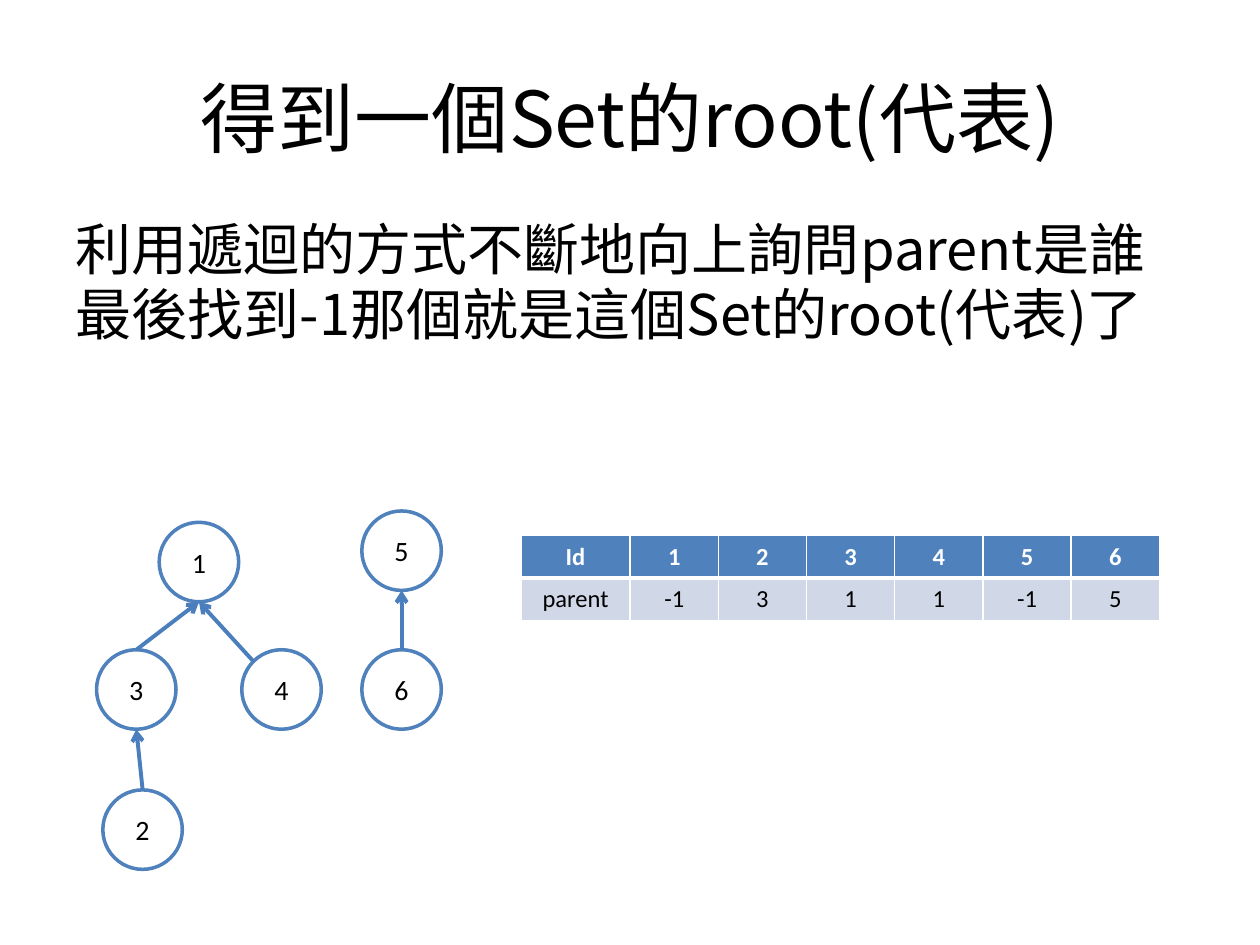
from dataclasses import dataclass

from lxml import etree
from pptx import Presentation
from pptx.dml.color import RGBColor
from pptx.enum import shapes, text
from pptx.oxml import ns
from pptx.util import Pt


@dataclass(frozen=True)
class Theme:
    """Colours, fonts and sizes of the slide."""
    black: RGBColor = RGBColor(0, 0, 0)
    white: RGBColor = RGBColor(255, 255, 255)
    blue: RGBColor = RGBColor(0x4F, 0x81, 0xBD)
    arrow: RGBColor = RGBColor(0x4B, 0x7E, 0xBC)
    pale: RGBColor = RGBColor(0xD0, 0xD8, 0xE8)
    chinese: str = "Noto Sans CJK SC"
    latin: str = "Calibri"
    title: int = 44
    body: int = 32
    node: int = 16
    cell: int = 14


THEME = Theme()
NODE_SIZE = 45.4
DIAGONAL = 0.5 ** 0.5


def add_child(parent, tag, **attributes):
    """Append a DrawingML element to a parent."""
    return etree.SubElement(parent, ns.qn(tag), attributes)


def format_text(frame, font, size, color, align, bold=False):
    """Format every paragraph and run of a text frame."""
    for paragraph in frame.paragraphs:
        paragraph.alignment = align
        for run in paragraph.runs:
            run.font.name = font
            run.font.size = Pt(size)
            run.font.bold = bold
            run.font.color.rgb = color
            add_child(run.font._element, "a:ea", typeface=font)


def place_title(slide, left, top, width, height):
    """Place the title in its box."""
    title = slide.shapes.title
    title.left, title.top, title.width, title.height = map(Pt, (left, top, width, height))
    frame = title.text_frame
    frame.text = "得到一個Set的root(代表)"
    frame.vertical_anchor = text.MSO_ANCHOR.MIDDLE
    format_text(frame, THEME.chinese, THEME.title, THEME.black, text.PP_ALIGN.CENTER)


def add_body(slide, left, top, width, height):
    """Add the explanation in its box."""
    frame = slide.shapes.add_textbox(*map(Pt, (left, top, width, height))).text_frame
    frame.word_wrap = True
    frame.text = "利用遞迴的方式不斷地向上詢問parent是誰\n最後找到-1那個就是這個Set的root(代表)了"
    format_text(frame, THEME.chinese, THEME.body, THEME.black, text.PP_ALIGN.LEFT)
    for paragraph in frame.paragraphs:
        paragraph.space_before = Pt(6.4)
        paragraph.line_spacing = 0.81


def add_borders(cell, bottom):
    """Draw white cell borders with the given bottom width."""
    properties = cell._tc.get_or_add_tcPr()
    for index, (side, width) in enumerate(zip("LRTB", (1, 1, 1, bottom))):
        line = etree.Element(ns.qn(f"a:ln{side}"), w=str(Pt(width)))
        add_child(add_child(line, "a:solidFill"), "a:srgbClr", val=str(THEME.white))
        properties.insert(index, line)


def add_parent_table(slide, left, top, width, height):
    """Add the table that lists the parent of each id."""
    rows = (("Id", 1, 2, 3, 4, 5, 6), ("parent", -1, 3, 1, 1, -1, 5))
    styles = ((THEME.blue, THEME.white, True, 3), (THEME.pale, THEME.black, False, 1))
    first_width, count = 62.4, len(rows[0])
    table = slide.shapes.add_table(
        len(rows), count, *map(Pt, (left, top, width, height))).table
    for index, column in enumerate(table.columns):
        column.width = Pt((width - first_width) / (count - 1) if index else first_width)
    for row, values, (fill, color, bold, bottom) in zip(table.rows, rows, styles):
        for cell, value in zip(row.cells, values):
            cell.text = str(value)
            cell.fill.solid()
            cell.fill.fore_color.rgb = fill
            add_borders(cell, bottom)
            format_text(cell.text_frame, THEME.latin, THEME.cell, color,
                        text.PP_ALIGN.CENTER, bold)


def add_node(group, label, left, top):
    """Add one numbered circle."""
    node = group.shapes.add_shape(
        shapes.MSO_SHAPE.OVAL, Pt(left), Pt(top), Pt(NODE_SIZE), Pt(NODE_SIZE))
    node.shadow.inherit = False
    node.fill.solid()
    node.fill.fore_color.rgb = THEME.white
    node.line.color.rgb = THEME.blue
    node.line.width = Pt(2)
    frame = node.text_frame
    frame.text = label
    frame.vertical_anchor = text.MSO_ANCHOR.MIDDLE
    format_text(frame, THEME.latin, THEME.node, THEME.black, text.PP_ALIGN.CENTER)


def add_arrow(group, parent, child, from_corner):
    """Point an arrow from a child circle to the bottom of its parent."""
    radius = NODE_SIZE / 2
    shift = radius * DIAGONAL if from_corner else 0
    drop = radius * (1 - DIAGONAL) if from_corner else 0
    arrow = group.shapes.add_connector(
        shapes.MSO_CONNECTOR.STRAIGHT,
        Pt(child[0] + radius - shift), Pt(child[1] + drop),
        Pt(parent[0] + radius), Pt(parent[1] + NODE_SIZE))
    arrow.line.color.rgb = THEME.arrow
    arrow.line.width = Pt(2.25)
    add_child(arrow.line._get_or_add_ln(), "a:tailEnd", type="arrow")
    add_child(arrow._element.spPr, "a:effectLst")


def add_tree(slide, left, top, nodes, edges):
    """Add a tree whose nodes are offset from its top left corner."""
    group = slide.shapes.add_group_shape()
    places = {label: (left + x, top + y) for label, (x, y) in nodes.items()}
    for label, place in places.items():
        add_node(group, label, *place)
    for child, parent, from_corner in edges:
        add_arrow(group, places[parent], places[child], from_corner)


def main():
    """Build and save the slide."""
    presentation = Presentation()
    presentation.slide_width, presentation.slide_height = Pt(720), Pt(540)
    slide = presentation.slides.add_slide(presentation.slide_layouts[5])
    place_title(slide, 36, 21.6, 648, 90)
    add_body(slide, 36, 126, 648, 356.4)
    add_parent_table(slide, 297.7, 306, 364.8, 48.5)
    add_tree(slide, 55.2, 298.5,
             {"1": (35.8, 0), "2": (3.6, 152.9), "4": (83, 72.8), "3": (0, 72.8)},
             (("2", "3", False), ("4", "1", True), ("3", "1", False)))
    add_tree(slide, 206.8, 292, {"5": (0, 0), "6": (0, 79.3)}, (("6", "5", False),))
    presentation.save("out.pptx")


if __name__ == "__main__":
    main()
